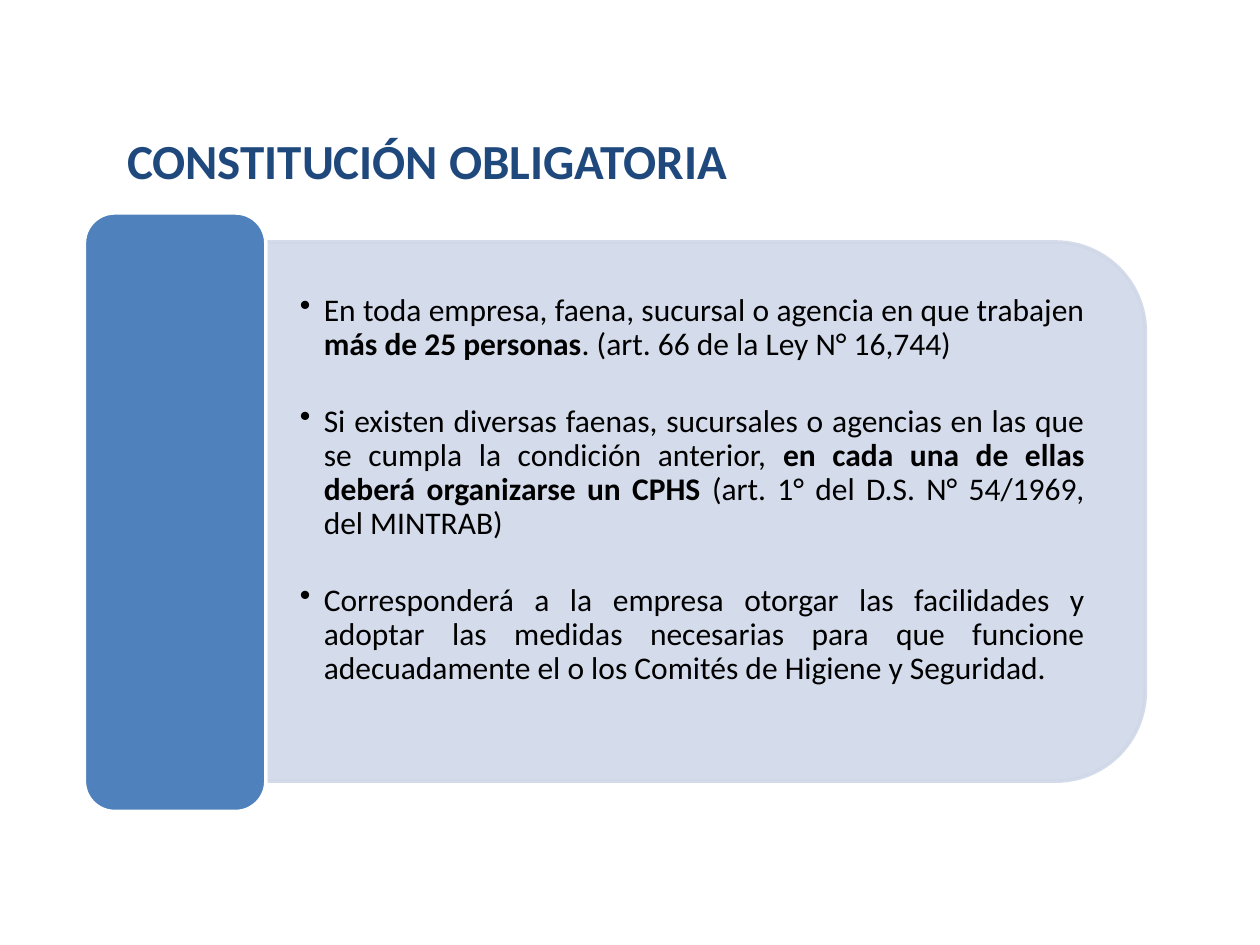
from lxml.etree import SubElement
from pptx import Presentation
from pptx.dml.color import RGBColor
from pptx.enum.shapes import MSO_SHAPE as Preset
from pptx.enum.text import MSO_ANCHOR as Anchor, PP_ALIGN as Align
from pptx.oxml.ns import qn
from pptx.util import Inches, Pt

TITLE = "CONSTITUCIÓN OBLIGATORIA"
REQUIREMENTS = [
    [
        ("En toda empresa, faena, sucursal o agencia en que trabajen ", False),
        ("más de 25 personas", True),
        (". (art. 66 de la Ley N° 16,744)", False),
    ],
    [
        ("Si existen diversas faenas, sucursales o agencias en las que "
         "se cumpla la condición anterior, ", False),
        ("en cada una de ellas deberá organizarse un CPHS ", True),
        ("(art. 1° del D.S. N° 54/1969, del MINTRAB)", False),
    ],
    [
        ("Corresponderá a la empresa otorgar las facilidades y adoptar las "
         "medidas necesarias para que funcione adecuadamente el o los "
         "Comités de Higiene y Seguridad.", False),
    ],
]


def set_color(color_format, value):
    """Give a colour format the colour of a hex string."""
    color_format.rgb = RGBColor.from_string(value)


def set_format(target, values):
    """Set every attribute named in a dict of format values."""
    for name, value in values.items():
        setattr(target, name, value)


def set_opacity(fill, percent):
    """Make a solid fill partly transparent."""
    color = fill._xPr.find(qn("a:solidFill"))[0]
    SubElement(color, qn("a:alpha"), val=str(percent * 1000))


def add_panel(slide, preset, box, fill, line, rotation=0, opacity=100):
    """Add a filled and outlined preset shape without shadow."""
    shape = slide.shapes.add_shape(preset, *map(Inches, box))
    shape.shadow.inherit = False
    shape.rotation = rotation
    shape.line.width = Pt(2)
    for area, color in ((shape.fill, fill), (shape.line.fill, line)):
        area.solid()
        set_color(area.fore_color, color)
        if opacity < 100:
            set_opacity(area, opacity)


def add_text_frame(slide, box, **values):
    """Add a text box and return its formatted frame."""
    frame = slide.shapes.add_textbox(*map(Inches, box)).text_frame
    set_format(frame, values)
    return frame


def add_run(paragraph, text, size, color, bold):
    """Append a run of text to a paragraph."""
    run = paragraph.add_run()
    run.text = text
    set_format(run.font, {"name": "Calibri", "size": Pt(size), "bold": bold})
    set_color(run.font.color, color)


def add_bullet(paragraph):
    """Give a paragraph a bullet with a hanging indent."""
    properties = paragraph._p.get_or_add_pPr()
    indent = Inches(0.19)
    properties.set("marL", str(indent))
    properties.set("indent", str(-indent))
    SubElement(properties, qn("a:buChar"), char="•")


def add_bullet_list(slide, box, items):
    """Add a justified bullet list, centred vertically in its box."""
    frame = add_text_frame(
        slide, box, word_wrap=True, vertical_anchor=Anchor.MIDDLE,
        margin_left=Inches(0.27), margin_right=Inches(0.27),
        margin_top=Inches(0.14), margin_bottom=Inches(0.48),
    )
    for index, runs in enumerate(items):
        paragraph = frame.add_paragraph() if index else frame.paragraphs[0]
        add_bullet(paragraph)
        set_format(paragraph, {
            "alignment": Align.JUSTIFY,
            "level": 1,
            "line_spacing": 0.9,
            "space_before": Pt(24.5 if index else 0),
        })
        for text, bold in runs:
            add_run(paragraph, text, 18, "000000", bold)


def main():
    """Build the slide and save it."""
    presentation = Presentation()
    presentation.slide_width = Inches(10)
    presentation.slide_height = Inches(7.5)
    slide = presentation.slides.add_slide(presentation.slide_layouts[6])
    title = add_text_frame(slide, (0.91, 0.99, 5.02, 0.57), word_wrap=False)
    add_run(title.paragraphs[0], TITLE, 28, "1F497D", True)
    add_panel(slide, Preset.ROUND_2_SAME_RECTANGLE, (3.46, 0.57, 4.28, 6.98),
              "D0D8E8", "D0D8E8", rotation=90, opacity=90)
    add_bullet_list(slide, (2.11, 2.13, 6.77, 3.86), REQUIREMENTS)
    add_panel(slide, Preset.ROUNDED_RECTANGLE, (0.67, 1.69, 1.44, 4.75),
              "4F81BD", "FFFFFF")
    presentation.save("out.pptx")


if __name__ == "__main__":
    main()
